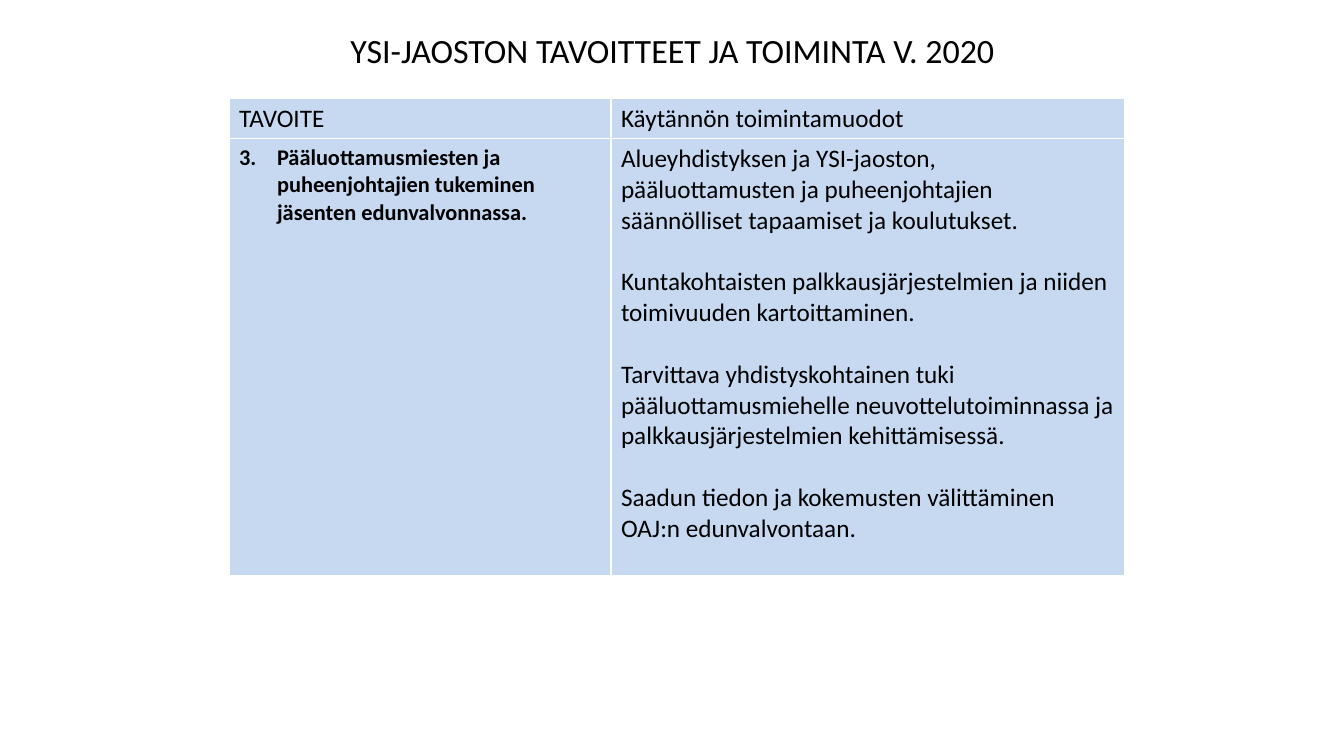
import pptx
import pptx.util
import pptx.dml.color
import pptx.enum.text
import pptx.oxml
import pptx.oxml.ns

SCALE = 914400 / 100.8  # EMU in one px

THEME = {
    "font": "Calibri",
    "text": "000000",
    "cell": "C6D9F1",
    "border": "FFFFFF",
    "title_size": 24.3,
    "body_size": 18,
    "goal_size": 16,
    "paragraph_gap": 22,
    "border_width": 1,
}


def px(length):
    return pptx.util.Emu(round(length * SCALE))


def write(para, text, size=THEME["body_size"], bold=False, align="LEFT", before=0):
    para.alignment = getattr(pptx.enum.text.PP_ALIGN, align)
    para.space_before = pptx.util.Pt(before)
    span = para.add_run()
    span.text = text
    span.font.name = THEME["font"]
    span.font.size = pptx.util.Pt(size)
    span.font.bold = bold
    span.font.color.rgb = pptx.dml.color.RGBColor.from_string(THEME["text"])


deck = pptx.Presentation()
deck.slide_width, deck.slide_height = px(1344), px(756)
page = deck.slides.add_slide(deck.slide_layouts[5])

# Title
title = page.shapes.title
title.left, title.top, title.width, title.height = px(219), px(30), px(907), px(46)
frame = title.text_frame
frame.word_wrap = True
frame.auto_size = pptx.enum.text.MSO_AUTO_SIZE.NONE
frame.vertical_anchor = pptx.enum.text.MSO_ANCHOR.MIDDLE
frame.margin_top, frame.margin_bottom = px(0), px(6)
write(frame.paragraphs[0], "YSI-JAOSTON TAVOITTEET JA TOIMINTA V. 2020",
      size=THEME["title_size"], align="CENTER")

# Table grid
columns, rows = [382, 514], [40, 437]
table = page.shapes.add_table(len(rows), len(columns), px(229), px(98),
                              px(sum(columns)), px(sum(rows))).table
table.first_row = table.horz_banding = False
for column, width in zip(table.columns, columns):
    column.width = px(width)
for row, height in zip(table.rows, rows):
    row.height = px(height)

# Cell fills and borders
for cell in table.iter_cells():
    cell.fill.solid()
    cell.fill.fore_color.rgb = pptx.dml.color.RGBColor.from_string(THEME["cell"])
    properties = cell._tc.get_or_add_tcPr()
    for place, side in enumerate("LRTB"):
        properties.insert(place, pptx.oxml.parse_xml(
            f'<a:ln{side} {pptx.oxml.ns.nsdecls("a")} '
            f'w="{pptx.util.Pt(THEME["border_width"])}"><a:solidFill>'
            f'<a:srgbClr val="{THEME["border"]}"/></a:solidFill></a:ln{side}>'))

# Header row
for cell, heading in zip(table.rows[0].cells, ["TAVOITE", "Käytännön toimintamuodot"]):
    write(cell.text_frame.paragraphs[0], heading)

# Numbered goal
goal = table.cell(1, 0).text_frame.paragraphs[0]
write(goal, "Pääluottamusmiesten ja puheenjohtajien tukeminen jäsenten edunvalvonnassa.",
      size=THEME["goal_size"], bold=True)
numbering = goal._p.get_or_add_pPr()
numbering.set("marL", str(px(38)))
numbering.set("indent", str(px(-38)))
numbering.append(pptx.oxml.parse_xml(
    f'<a:buAutoNum {pptx.oxml.ns.nsdecls("a")} type="arabicPeriod" startAt="3"/>'))

# Practical actions
actions = [
    "Alueyhdistyksen ja YSI-jaoston, pääluottamusten ja puheenjohtajien "
    "säännölliset tapaamiset ja koulutukset.",
    "Kuntakohtaisten palkkausjärjestelmien ja niiden toimivuuden kartoittaminen.",
    "Tarvittava yhdistyskohtainen tuki pääluottamusmiehelle neuvottelutoiminnassa "
    "ja palkkausjärjestelmien kehittämisessä.",
    "Saadun tiedon ja kokemusten välittäminen OAJ:n edunvalvontaan.",
]
frame = table.cell(1, 1).text_frame
for number, action in enumerate(actions):
    para = frame.add_paragraph() if number else frame.paragraphs[0]
    write(para, action, before=THEME["paragraph_gap"] if number else 0)

deck.save("out.pptx")
